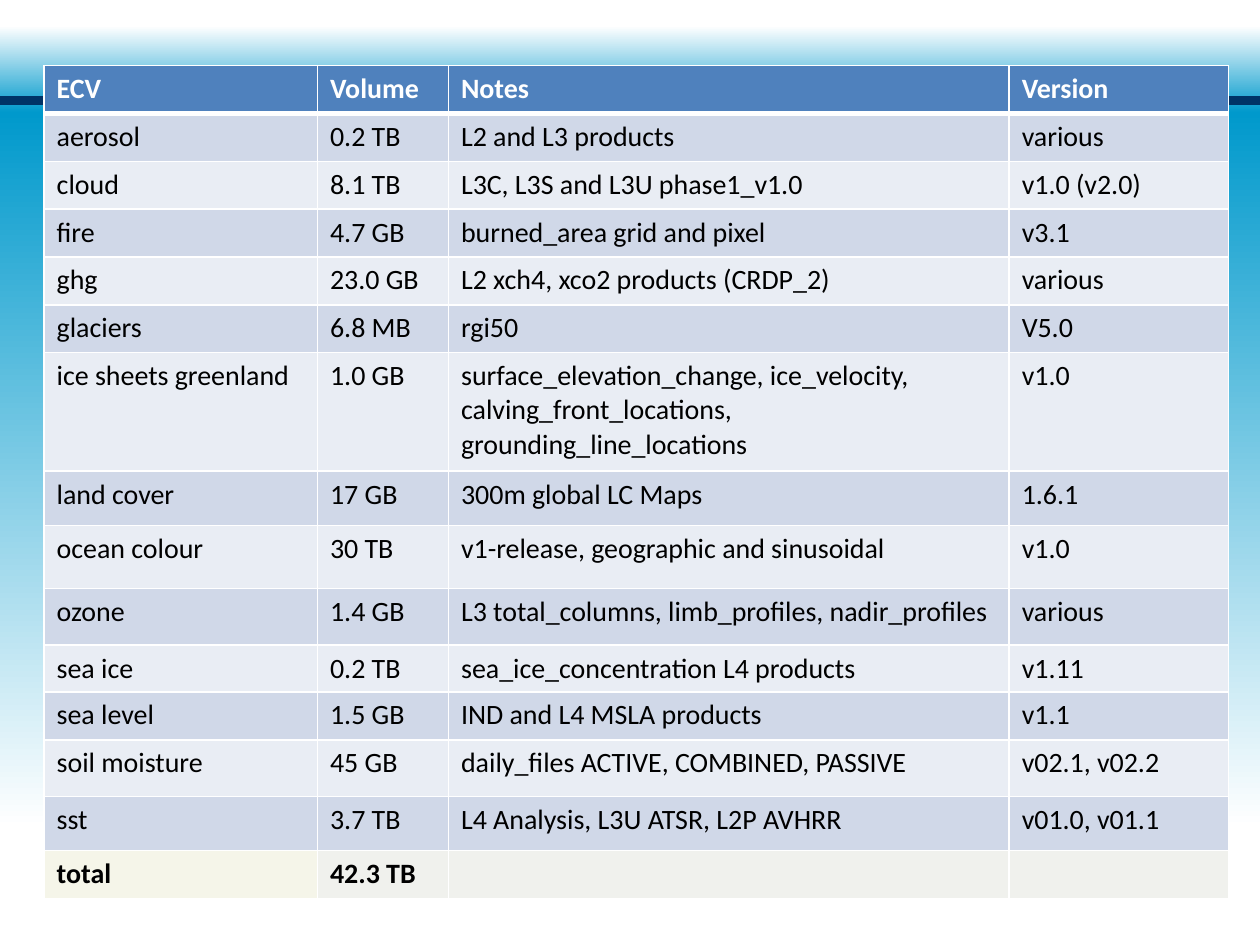
from lxml.etree import SubElement
from pptx import Presentation
from pptx.dml.color import RGBColor
from pptx.enum.shapes import MSO_SHAPE
from pptx.oxml import parse_xml
from pptx.oxml.ns import nsdecls, qn
from pptx.util import Inches, Pt

COLORS = {
    "white": "FFFFFF",
    "black": "000000",
    "sky": "0099CC",
    "navy": "003366",
    "header": "4F81BD",
    "band_dark": "D0D8E8",
    "band_light": "E9EDF4",
    "total_first": "F5F5E9",
    "total": "F0F1ED",
}
FONT = "Calibri"
TEXT_SIZE = Pt(16)
COLUMN_WIDTHS = [2.17, 1.04, 4.45, 1.74]
ROW_HEIGHT = 0.38
SPECIAL_HEIGHTS = {
    "ice sheets greenland": 0.94,
    "land cover": 0.43,
    "ocean colour": 0.5,
    "ozone": 0.45,
    "sea ice": 0.34,
    "soil moisture": 0.45,
    "sst": 0.43,
}
ROWS = [
    ("ECV", "Volume", "Notes", "Version"),
    ("aerosol", "0.2 TB", "L2 and L3 products", "various"),
    ("cloud", "8.1 TB", "L3C, L3S and L3U phase1_v1.0", "v1.0 (v2.0)"),
    ("fire", "4.7 GB", "burned_area grid and pixel", "v3.1"),
    ("ghg", "23.0 GB", "L2 xch4, xco2 products (CRDP_2)", "various"),
    ("glaciers", "6.8 MB", "rgi50", "V5.0"),
    ("ice sheets greenland", "1.0 GB",
     "surface_elevation_change, ice_velocity, calving_front_locations, "
     "grounding_line_locations", "v1.0"),
    ("land cover", "17 GB", "300m global LC Maps", "1.6.1"),
    ("ocean colour", "30 TB", "v1-release, geographic and sinusoidal", "v1.0"),
    ("ozone", "1.4 GB", "L3 total_columns, limb_profiles, nadir_profiles", "various"),
    ("sea ice", "0.2 TB", "sea_ice_concentration L4 products", "v1.11"),
    ("sea level", "1.5 GB", "IND and L4 MSLA products", "v1.1"),
    ("soil moisture", "45 GB", "daily_files ACTIVE, COMBINED, PASSIVE", "v02.1, v02.2"),
    ("sst", "3.7 TB", "L4 Analysis, L3U ATSR, L2P AVHRR", "v01.0, v01.1"),
    ("total", "42.3 TB", "", ""),
]
LAST_ROW = len(ROWS) - 1


def rgb(name):
    return RGBColor.from_string(COLORS[name])


def add_rectangle(slide, left, top, width, height):
    shape = slide.shapes.add_shape(MSO_SHAPE.RECTANGLE, left, top, width, height)
    shape.shadow.inherit = False
    return shape


def add_backdrop(slide, left, top, width, height):
    """Place the vertical sky gradient and the navy rule across it."""
    sky = add_rectangle(slide, left, top, width, height)
    sky.line.fill.background()
    sky.fill.gradient()
    sky.fill.gradient_angle = 90
    stops = sky.fill._fill._gradFill.find(qn("a:gsLst"))
    for stop in list(stops):
        stops.remove(stop)
    for percent, name in [(0, "white"), (5, "white"), (88, "sky"), (98, "white")]:
        stop = SubElement(stops, qn("a:gs"), pos=str(percent * 1000))
        SubElement(stop, qn("a:srgbClr"), val=COLORS[name])

    rule = add_rectangle(slide, left, top + Inches(0.71), width, Inches(0.04))
    rule.fill.solid()
    rule.fill.fore_color.rgb = rgb("navy")
    rule.line.color.rgb = rgb("navy")
    rule.line.width = Pt(2)


def set_borders(cell, top_points, bottom_points):
    widths = {"lnL": 1, "lnR": 1, "lnT": top_points, "lnB": bottom_points}
    properties = cell._tc.get_or_add_tcPr()
    for position, (tag, points) in enumerate(widths.items()):
        properties.insert(position, parse_xml(
            f'<a:{tag} {nsdecls("a")} w="{Pt(points)}"><a:solidFill>'
            f'<a:srgbClr val="{COLORS["white"]}"/></a:solidFill></a:{tag}>'))


def fill_name(row, column):
    if row == 0:
        return "header"
    if row == LAST_ROW:
        return "total" if column else "total_first"
    return "band_dark" if row % 2 else "band_light"


def format_cell(cell, row, column):
    cell.fill.solid()
    cell.fill.fore_color.rgb = rgb(fill_name(row, column))
    set_borders(cell, 3 if row == 1 else 1, 3 if row == 0 else 1)
    paragraph = cell.text_frame.paragraphs[0]
    for run in paragraph.runs:
        run.font.name = FONT
        run.font.size = TEXT_SIZE
        run.font.bold = row in (0, LAST_ROW)
        run.font.color.rgb = rgb("black" if row else "white")
    if not paragraph.runs:
        # Keeps an empty cell from growing to the default text size
        SubElement(paragraph._p, qn("a:endParaRPr"), sz=str(int(TEXT_SIZE.pt * 100)))


def add_archive_table(slide, left, top, width, height):
    table = slide.shapes.add_table(
        len(ROWS), len(COLUMN_WIDTHS), left, top, width, height).table
    for column, column_width in zip(table.columns, COLUMN_WIDTHS):
        column.width = Inches(column_width)
    for row, values in enumerate(ROWS):
        table.rows[row].height = Inches(SPECIAL_HEIGHTS.get(values[0], ROW_HEIGHT))
        for column, value in enumerate(values):
            cell = table.cell(row, column)
            cell.text_frame.text = value
            format_cell(cell, row, column)


def main():
    presentation = Presentation()
    presentation.slide_width = Inches(10)
    presentation.slide_height = Inches(7.5)
    slide = presentation.slides.add_slide(presentation.slide_layouts[6])
    add_backdrop(slide, Inches(0), Inches(0.07), Inches(10), Inches(6.84))
    add_archive_table(slide, Inches(0.35), Inches(0.52), Inches(9.39), Inches(6.57))
    presentation.save("out.pptx")


if __name__ == "__main__":
    main()
